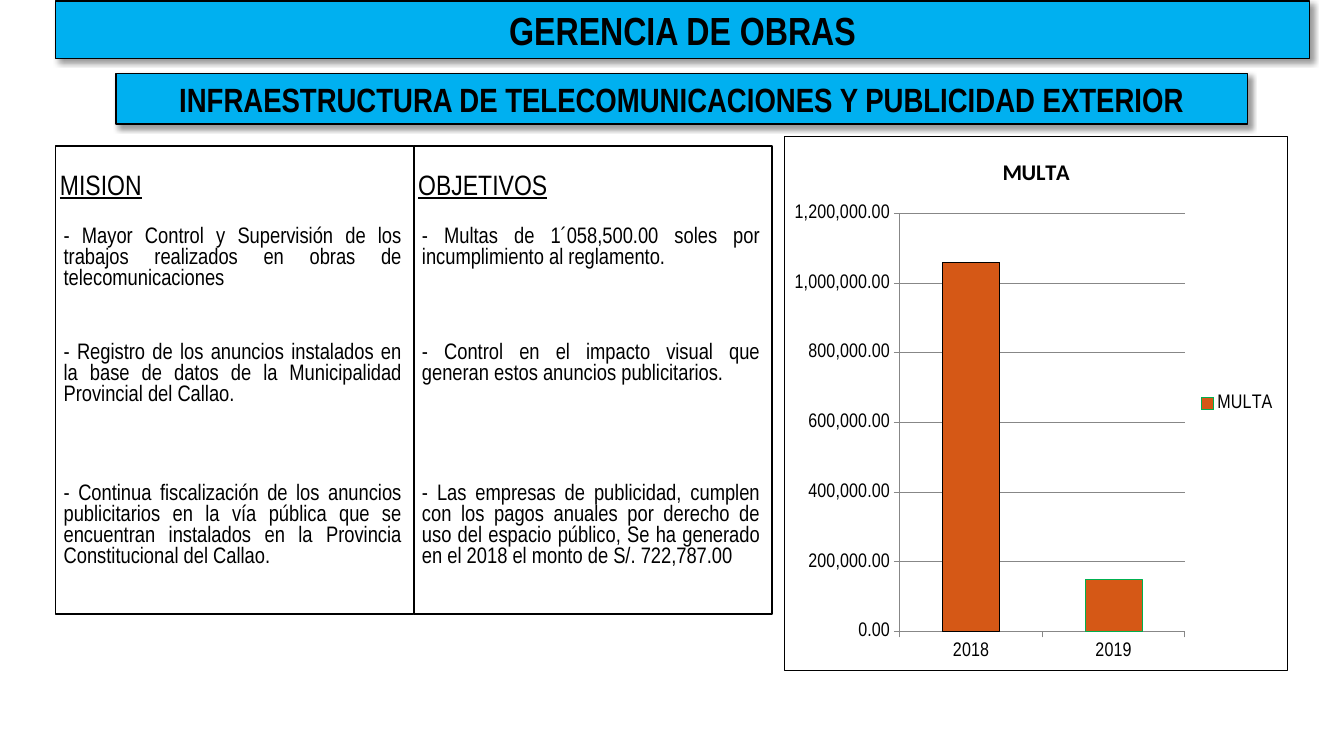
from lxml import etree
from pptx import Presentation
from pptx.chart.data import CategoryChartData
from pptx.dml.color import RGBColor
from pptx.enum.chart import XL_CHART_TYPE as ChartType, XL_LEGEND_POSITION as LegendPos
from pptx.enum.chart import XL_TICK_MARK as Tick
from pptx.enum.shapes import MSO_SHAPE as Shape
from pptx.enum.text import MSO_ANCHOR as Anchor, PP_ALIGN as Align
from pptx.oxml import parse_xml
from pptx.oxml.ns import nsdecls, qn
from pptx.util import Cm, Pt

COLORS = {"black": "000000", "banner": "00B0F0", "bar": "D55816",
          "outline": "00B050", "grid": "878787"}
NARROW, TITLE_FONT = "Arial Narrow", "Calibri"

HEADINGS = ["MISION", "OBJETIVOS"]
ROWS = [
    ["- Mayor Control y Supervisión de los trabajos realizados en obras de telecomunicaciones",
     "- Multas de 1´058,500.00 soles por incumplimiento al reglamento."],
    ["- Registro de los anuncios instalados en la base de datos de la Municipalidad "
     "Provincial del Callao.",
     "- Control en el impacto visual que generan estos anuncios publicitarios."],
    ["- Continua fiscalización de los anuncios publicitarios en la vía pública que se "
     "encuentran instalados en la Provincia Constitucional del Callao.",
     "- Las empresas de publicidad, cumplen con los pagos anuales por derecho de uso del "
     "espacio público, Se ha generado en el 2018 el monto de S/. 722,787.00"],
]
ROW_HEIGHTS = [2.29, 2.92, 3.56, 4.37]
COL_WIDTH = 9.03


def rgb(name):
    return RGBColor.from_string(COLORS[name])


class SlideBuilder:
    def __init__(self, prs):
        self.s = prs.slides.add_slide(prs.slide_layouts[6])

    def font(self, f, size, name=NARROW, bold=False, underline=None):
        f.size, f.name, f.bold, f.underline = Pt(size), name, bold, underline
        f.color.rgb = rgb("black")

    def line(self, fmt, color, width):
        fmt.color.rgb = rgb(color)
        fmt.width = Pt(width)

    def frame(self, x, y, w, h):
        """Add an unfilled rectangle with a black outline."""
        sp = self.s.shapes.add_shape(Shape.RECTANGLE, Cm(x), Cm(y), Cm(w), Cm(h))
        sp.shadow.inherit = False
        sp.fill.background()
        self.line(sp.line, "black", 1)
        return sp

    def banner(self, x, y, w, h, text, size):
        sp = self.frame(x, y, w, h)
        sp.fill.solid()
        sp.fill.fore_color.rgb = rgb("banner")
        effects = sp._element.spPr.find(qn("a:effectLst"))
        shadow = etree.SubElement(effects, qn("a:outerShdw"), blurRad=str(Pt(4)),
                                  dist=str(Pt(3)), dir="2700000", algn="tl", rotWithShape="0")
        color = etree.SubElement(shadow, qn("a:srgbClr"), val=COLORS["black"])
        etree.SubElement(color, qn("a:alpha"), val="40000")
        tf = sp.text_frame
        tf.word_wrap = True
        tf.text = text
        p = tf.paragraphs[0]
        p.alignment = Align.CENTER
        self.font(p.runs[0].font, size, bold=True)

    def table(self, x, y):
        rows, cols = len(ROW_HEIGHTS), len(HEADINGS)
        t = self.s.shapes.add_table(rows, cols, Cm(x), Cm(y), Cm(COL_WIDTH * cols),
                                    Cm(sum(ROW_HEIGHTS))).table
        t.first_row = t.horz_banding = False
        for col in t.columns:
            col.width = Cm(COL_WIDTH)
        for i, (row, height, texts) in enumerate(zip(t.rows, ROW_HEIGHTS, [HEADINGS] + ROWS)):
            row.height = Cm(height)
            for cell, text in zip(row.cells, texts):
                cell.fill.background()
                cell.text = text
                p = cell.text_frame.paragraphs[0]
                if i == 0:
                    cell.vertical_anchor = Anchor.MIDDLE
                    cell.margin_left, cell.margin_top = Cm(0.16), Cm(0.6)
                    cell.margin_right = cell.margin_bottom = 0
                    self.font(p.runs[0].font, 20, underline=True)
                else:
                    p.alignment = Align.JUSTIFY
                    self.font(p.runs[0].font, 16)

    def chart(self, x, y, w, h, title, cats, vals):
        data = CategoryChartData(number_format="#,##0.00")
        data.categories = cats
        data.add_series(title, vals)
        ch = self.s.shapes.add_chart(ChartType.COLUMN_CLUSTERED, Cm(x), Cm(y), Cm(w), Cm(h),
                                     data).chart
        self.font(ch.font, 14, TITLE_FONT)
        ch.has_title = True
        tf = ch.chart_title.text_frame
        tf.text = title
        self.font(tf.paragraphs[0].runs[0].font, 16, TITLE_FONT, bold=True)
        ch.has_legend = True
        ch.legend.position = LegendPos.RIGHT
        ch.legend.include_in_layout = False
        self.font(ch.legend.font, 14)

        for axis in (ch.category_axis, ch.value_axis):
            self.font(axis.tick_labels.font, 14)
            axis.major_tick_mark = Tick.OUTSIDE
            self.line(axis.format.line, "grid", 0.75)
        va = ch.value_axis
        va.minimum_scale, va.maximum_scale, va.major_unit = 0, 1200000, 200000
        va.tick_labels.number_format = "#,##0.00"
        va.tick_labels.number_format_is_linked = False
        self.line(va.major_gridlines.format.line, "grid", 0.75)

        plot = ch.plots[0]
        plot.gap_width = 150
        plot.vary_by_categories = False
        series = plot.series[0]
        first_bar = series.points[0]
        for item, outline in ((series, "outline"), (first_bar, "black")):
            item.format.fill.solid()
            item.format.fill.fore_color.rgb = rgb("bar")
            self.line(item.format.line, outline, 0.75)
        border = parse_xml(
            f'<c:spPr {nsdecls("c", "a")}><a:noFill/><a:ln w="{Pt(0.75)}"><a:solidFill>'
            f'<a:srgbClr val="{COLORS["black"]}"/></a:solidFill></a:ln></c:spPr>')
        ch._chartSpace.find(qn("c:chart")).addnext(border)


def main():
    prs = Presentation()
    prs.slide_width, prs.slide_height = Cm(33.87), Cm(19.05)
    b = SlideBuilder(prs)
    b.table(1.35, 3.3)
    b.chart(19.76, 3.43, 12.7, 13.49, "MULTA", ["2018", "2019"], [1060000, 150000])
    b.banner(2.92, 1.85, 28.52, 1.28,
             "INFRAESTRUCTURA DE TELECOMUNICACIONES Y PUBLICIDAD EXTERIOR", 24)
    b.banner(1.4, 0.03, 31.6, 1.45, "GERENCIA DE OBRAS", 28)
    for i in range(len(HEADINGS)):
        b.frame(1.4 + i * COL_WIDTH, 3.68, COL_WIDTH, 11.79)
    prs.save("out.pptx")


if __name__ == "__main__":
    main()
